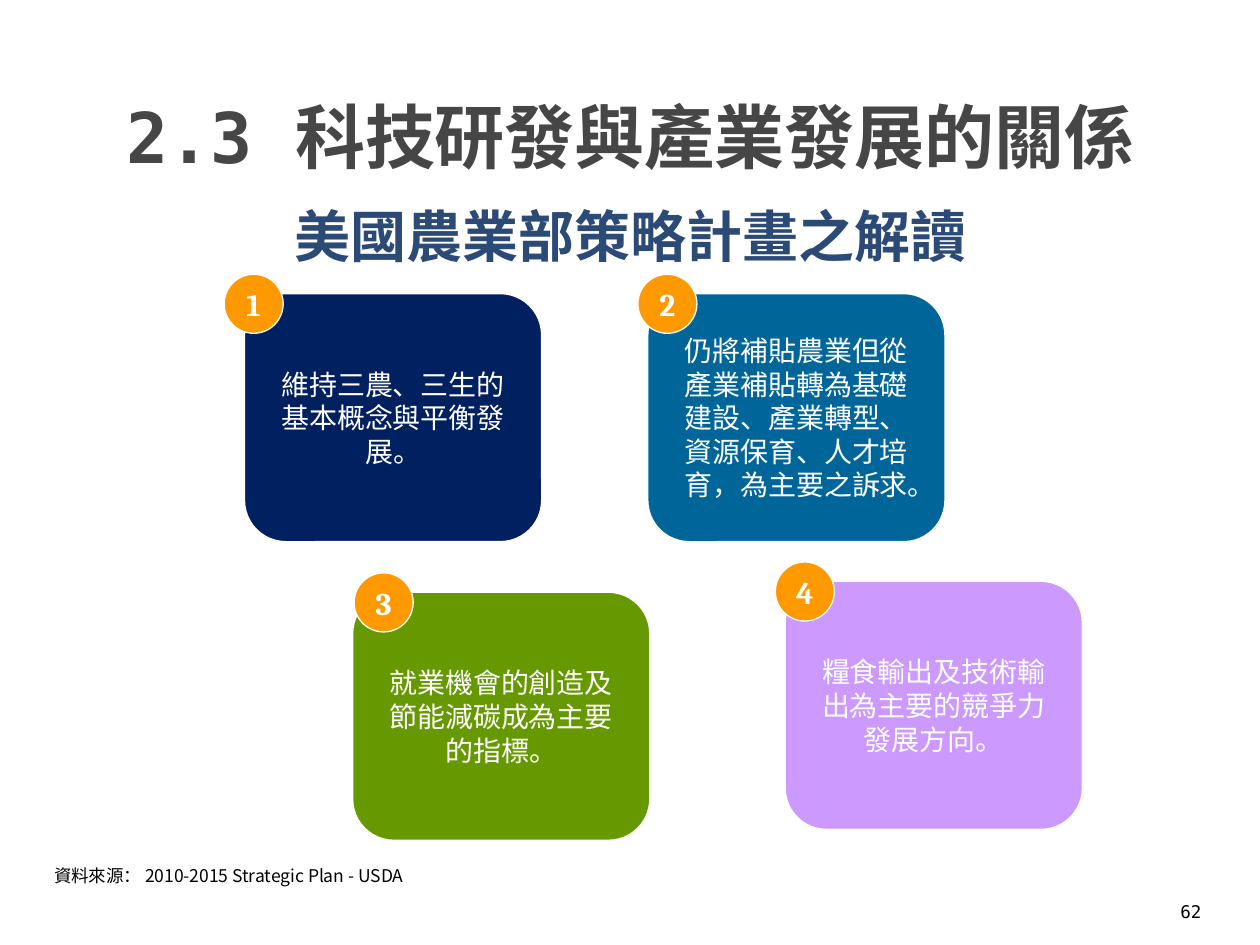
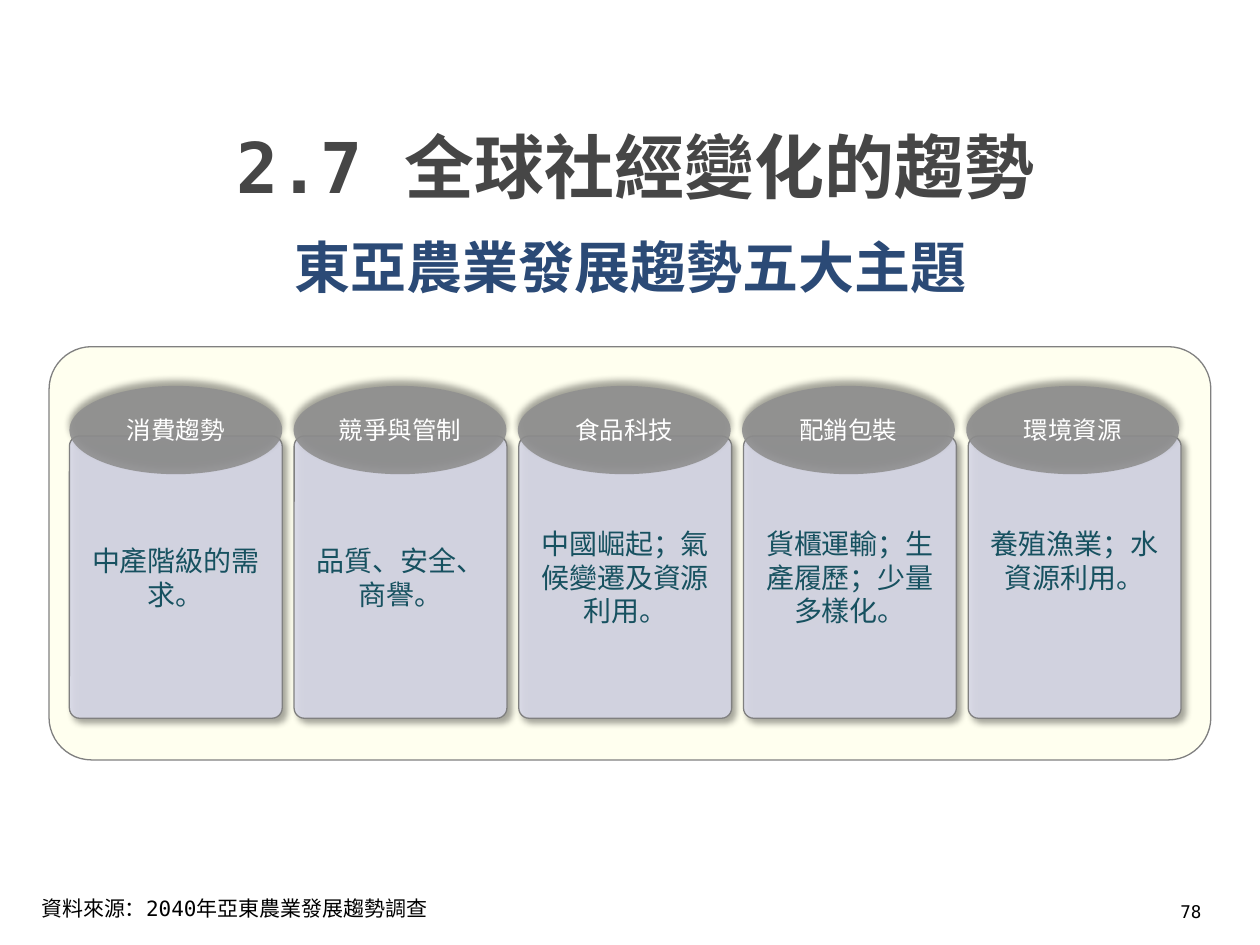
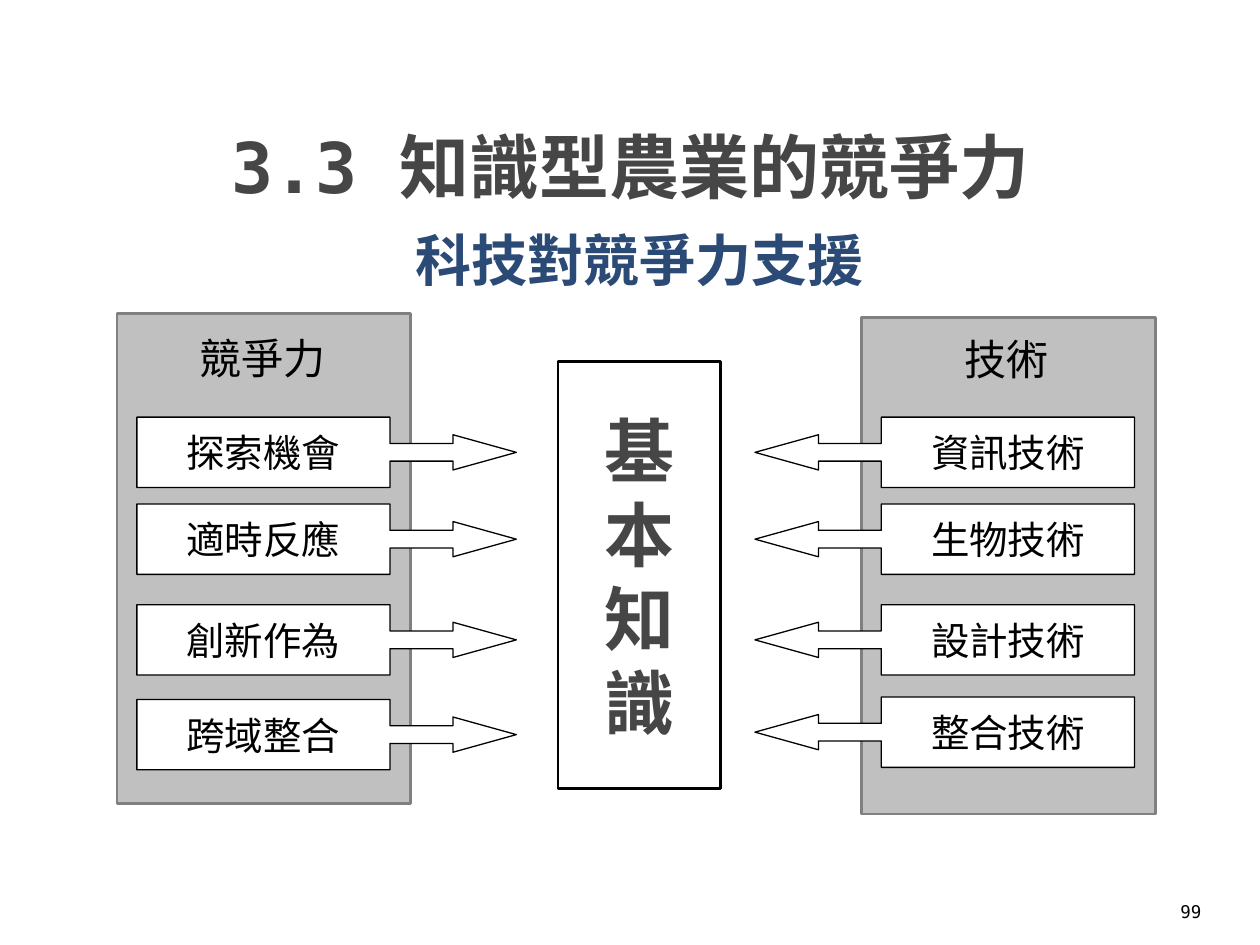
from dataclasses import dataclass

from lxml import etree
from pptx import Presentation
from pptx.dml.color import RGBColor
from pptx.enum.shapes import MSO_SHAPE
from pptx.enum.text import MSO_ANCHOR, PP_ALIGN
from pptx.oxml.ns import qn
from pptx.util import Cm, Pt

ROUND = MSO_SHAPE.ROUNDED_RECTANGLE
OVAL = MSO_SHAPE.OVAL
RECT = MSO_SHAPE.RECTANGLE
RIGHT_CALL = MSO_SHAPE.RIGHT_ARROW_CALLOUT
LEFT_CALL = MSO_SHAPE.LEFT_ARROW_CALLOUT
LEFT, CENTER = PP_ALIGN.LEFT, PP_ALIGN.CENTER
TOP, MIDDLE = MSO_ANCHOR.TOP, MSO_ANCHOR.MIDDLE


@dataclass(frozen=True)
class Theme:
    # Fonts
    mono: str = "DejaVu Sans Mono"
    sans: str = "Noto Sans CJK SC"
    arial: str = "Arial"
    serif: str = "Cambria"
    # Colours
    head: str = "464646"
    sub: str = "2B4A76"
    ink: str = "000000"
    white: str = "FFFFFF"
    gray: str = "808080"
    navy: str = "002060"
    blue: str = "006699"
    green: str = "669900"
    lilac: str = "CC99FF"
    badge: str = "FF9900"
    cream: str = "FFFFCC"
    card: str = "D7D8E7"
    cap: str = "909090"
    teal: str = "175160"
    panel: str = "C0C0C0"
    # Type sizes
    big: int = 40
    mid: int = 32
    label: int = 24
    item: int = 22
    num: int = 18
    body: int = 16
    small: int = 14
    note: int = 12
    tiny: int = 10


T = Theme()


def rgb(code):
    return RGBColor.from_string(code)


def write(frame, text, size=T.body, color=T.ink, font=T.mono, bold=False,
          align=CENTER, anchor=MIDDLE, wrap=True, pad=0.25, foot=0.13):
    """Fill a text frame; text is a string or a list of (text, font) runs."""
    frame.word_wrap = wrap
    frame.vertical_anchor = anchor
    frame.margin_left = frame.margin_right = Cm(pad)
    frame.margin_top, frame.margin_bottom = Cm(0.13), Cm(foot)
    para = frame.paragraphs[0]
    para.alignment = align
    for part, face in [(text, font)] if isinstance(text, str) else text:
        run = para.add_run()
        run.text = part
        run.font.name, run.font.size, run.font.bold = face, Pt(size), bold
        run.font.color.rgb = rgb(color)


def label(slide, box, text, **style):
    area = slide.shapes.add_textbox(*map(Cm, box))
    write(area.text_frame, text, **style)


def cast(shape, angle):
    """Give a shape a soft shadow in the direction of angle."""
    effects = shape._element.spPr.find(qn("a:effectLst"))
    outer = etree.SubElement(effects, qn("a:outerShdw"), blurRad=str(Pt(4)),
                             dist=str(Pt(3)), dir=str(angle * 60000),
                             algn="ctr", rotWithShape="0")
    tint = etree.SubElement(outer, qn("a:srgbClr"), val=T.ink)
    etree.SubElement(tint, qn("a:alpha"), val="40000")


def draw(slide, kind, box, fill=None, line=None, width=0.75, adj=(),
         alpha=None, shade=None, text=None, **style):
    shape = slide.shapes.add_shape(kind, *map(Cm, box))
    shape.shadow.inherit = False
    for index, value in enumerate(adj):
        shape.adjustments[index] = value
    if fill:
        shape.fill.solid()
        shape.fill.fore_color.rgb = rgb(fill)
        if alpha:
            tint = shape._element.spPr.find(qn("a:solidFill"))[0]
            etree.SubElement(tint, qn("a:alpha"), val=str(alpha * 1000))
    else:
        shape.fill.background()
    if line:
        shape.line.color.rgb = rgb(line)
        shape.line.width = Pt(width)
    else:
        shape.line.fill.background()
    if shade is not None:
        cast(shape, shade)
    if text:
        write(shape.text_frame, text, **style)


def start(deck, head, head_box, sub, sub_box, page):
    """Add a slide with heading, subtitle and page number."""
    slide = deck.slides.add_slide(deck.slide_layouts[6])
    label(slide, head_box, head, size=T.big, color=T.head, bold=True)
    label(slide, sub_box, sub, size=T.mid, color=T.sub, bold=True)
    label(slide, (23.32, 18.01, 1.37, 0.74), page, size=T.tiny)
    return slide


def point(slide, x, y, num, text, fill, shift):
    """Coloured card with a numbered badge on its corner."""
    draw(slide, ROUND, (x, y, 5.99, 5), fill, T.white, text=text,
         color=T.white)
    draw(slide, OVAL, (x + shift, y - 0.39, 1.19, 1.19), T.badge, T.white,
         text=num, size=T.num, color=T.white, font=T.serif, bold=True, pad=0)


def themes(slide, box, items):
    """Pale board with a row of capped cards."""
    x, y, _, _ = box
    draw(slide, ROUND, box, T.cream, T.gray, adj=[0.103], alpha=30)
    for i, (_, text, foot) in enumerate(items):
        draw(slide, ROUND, (x + 0.41 + i * 4.53, y + 1.8, 4.29, 5.69),
             T.card, T.gray, adj=[0.048], alpha=90, shade=45,
             text=text, color=T.teal, foot=foot)
    for i, (name, _, _) in enumerate(items):
        draw(slide, OVAL, (x + 0.41 + i * 4.52, y + 0.79, 4.29, 1.78),
             T.cap, alpha=90, shade=270, text=name, size=T.small,
             color=T.white)


def panel(slide, box, name, name_box, kind, shift, tail, items):
    """Gray panel whose callouts point out of one side."""
    x, y, _, _ = box
    dx, dy, wide, high = name_box
    draw(slide, RECT, box, T.panel, T.gray, 1.5)
    label(slide, (x + dx, y + dy, wide, high), name, size=T.label,
          font=T.sans, align=LEFT, anchor=TOP, wrap=False)
    for top, text in items:
        draw(slide, kind, (x + shift, y + top, 7.65, 1.42), T.white, T.ink,
             adj=[0.25, 0.25, tail, 0.667], text=text, size=T.item,
             font=T.arial)


def plan(deck):
    slide = start(deck, "2.3 科技研發與產業發展的關係", (0.71, 1.32, 24, 2.82),
                  "美國農業部策略計畫之解讀", (0.71, 3.33, 24, 2.82), "62")
    points = [
        (4.93, 5.92, "維持三農、三生的基本概念與平衡發展。", T.navy, -0.41),
        (13.06, 5.92, "仍將補貼農業但從產業補貼轉為基礎建設、產業轉型、"
         "資源保育、人才培育，為主要之訴求。", T.blue, -0.2),
        (7.11, 11.94, "就業機會的創造及節能減碳成為主要的指標。", T.green, 0.03),
        (15.83, 11.72, "糧食輸出及技術輸出為主要的競爭力發展方向。",
         T.lilac, -0.2),
    ]
    for num, (x, y, text, fill, shift) in enumerate(points, 1):
        point(slide, x, y, str(num), text, fill, shift)
    source = [("資料來源", T.mono),
              ("： 2010-2015 Strategic Plan - USDA", T.sans)]
    label(slide, (0.84, 17.3, 14.4, 0.69), source, size=T.tiny, align=LEFT,
          anchor=TOP)


def trends(deck):
    slide = start(deck, "2.7 全球社經變化的趨勢", (1, 1.75, 23.62, 3.18),
                  "東亞農業發展趨勢五大主題", (0.71, 3.96, 24, 2.82), "78")
    themes(slide, (0.99, 6.99, 23.42, 8.33), [
        ("消費趨勢", "中產階級的需求。", 0.13),
        ("競爭與管制", "品質、安全、商譽。", 0.13),
        ("食品科技", "中國崛起；氣候變遷及資源利用。", 0.13),
        ("配銷包裝", "貨櫃運輸；生產履歷；少量多樣化。", 0.13),
        ("環境資源", "養殖漁業；水資源利用。", 0.81),
    ])
    label(slide, (0.51, 17.93, 8.43, 0.76),
          "資料來源：2040年亞東農業發展趨勢調查", size=T.note, anchor=TOP)


def support(deck):
    slide = start(deck, "3.3 知識型農業的競爭力", (0.71, 1.93, 24, 2.82),
                  "科技對競爭力支援", (0.89, 4.32, 24, 1.8), "99")
    panel(slide, (2.36, 6.32, 5.92, 9.88), "競爭力", (1.42, 0.26, 3.07, 1.27),
          RIGHT_CALL, 0.4, 0.899,
          [(2.09, "探索機會"), (3.84, "適時反應"), (5.87, "創新作為"),
           (7.78, "跨域整合")])
    panel(slide, (17.37, 6.4, 5.92, 10.01), "技術", (1.83, 0.2, 2.24, 1.27),
          LEFT_CALL, -2.15, 0.901,
          [(2.01, "資訊技術"), (3.76, "生物技術"), (5.79, "設計技術"),
           (7.65, "整合技術")])
    # Shared core between the two panels
    draw(slide, RECT, (11.25, 7.29, 3.28, 8.61), line=T.ink, width=1.5,
         text="基本知識", size=T.big, color=T.head, bold=True)


def main():
    deck = Presentation()
    deck.slide_width, deck.slide_height = Cm(25.4), Cm(19.05)
    for build in (plan, trends, support):
        build(deck)
    deck.save("out.pptx")


if __name__ == "__main__":
    main()
